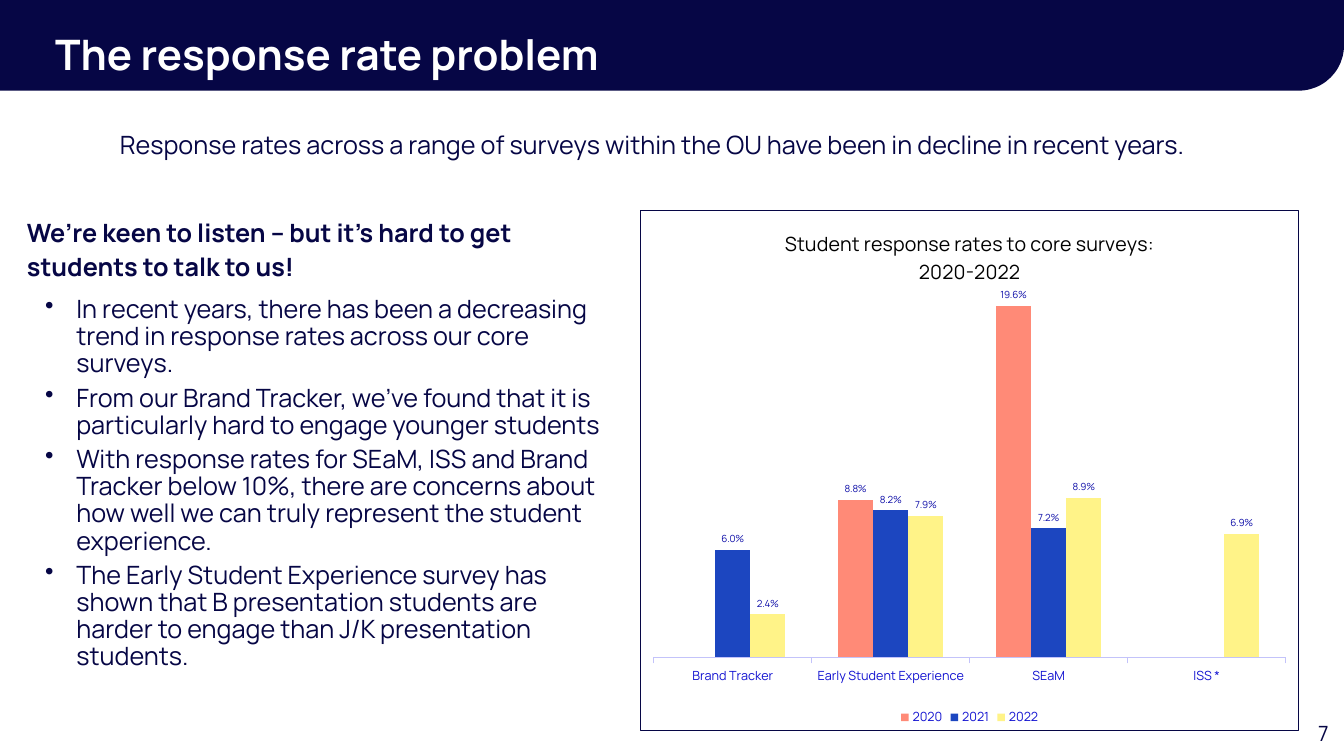
"""Build a slide on falling survey response rates, with bullets and a column chart."""
from dataclasses import dataclass

from lxml import etree
from pptx import Presentation
from pptx.chart.data import CategoryChartData
from pptx.dml.color import RGBColor
from pptx.enum.chart import XL_CHART_TYPE, XL_LABEL_POSITION, XL_LEGEND_POSITION, XL_TICK_MARK
from pptx.enum.shapes import MSO_SHAPE
from pptx.enum.text import PP_ALIGN
from pptx.oxml import parse_xml
from pptx.oxml.ns import nsdecls, qn
from pptx.util import Pt

COLUMNS = XL_CHART_TYPE.COLUMN_CLUSTERED
LABEL_ABOVE = XL_LABEL_POSITION.OUTSIDE_END
LEGEND_BELOW = XL_LEGEND_POSITION.BOTTOM
TICK_OUTSIDE = XL_TICK_MARK.OUTSIDE
TICK_NONE = XL_TICK_MARK.NONE
HEADER_SHAPE = MSO_SHAPE.ROUND_1_RECTANGLE
LEFT, RIGHT = PP_ALIGN.LEFT, PP_ALIGN.RIGHT

TITLE = "The response rate problem"
SUBTITLE = "Response rates across a range of surveys within the OU have been in decline in recent years."
PAGE_NUMBER = "7"
LEAD = "We’re keen to listen – but it’s hard to get students to talk to us!"
BULLETS = [
    "In recent years, there has been a decreasing trend in response rates across our core surveys.",
    "From our Brand Tracker, we’ve found that it is particularly hard to engage younger students",
    "With response rates for SEaM, ISS and Brand Tracker below 10%, there are concerns about "
    "how well we can truly represent the student experience.",
    "The Early Student Experience survey has shown that B presentation students are harder "
    "to engage than J/K presentation students.",
]
CHART_TITLE = ["Student response rates to core surveys:", "2020-2022"]
SURVEYS = ["Brand Tracker", "Early Student Experience", "SEaM", "ISS *"]
RATES = {
    "2020": [None, 0.088, 0.196, None],
    "2021": [0.06, 0.082, 0.072, None],
    "2022": [0.024, 0.079, 0.089, 0.069],
}

WIDTH, HEIGHT = 960, 540
HEADER_BOX = (0, 0, WIDTH, 64.8)
TITLE_BOX = (32.4, 13, 847.4, 38.9)
SUBTITLE_BOX = (78.5, 86.4, 801.4, 38.9)
CONTENT_TOP, CONTENT_HEIGHT = 149.8, 372.2
BODY_BOX = (12.2, CONTENT_TOP, 424.8, CONTENT_HEIGHT)
CHART_BOX = (457.2, CONTENT_TOP, 470.9, CONTENT_HEIGHT)
PAGE_BOX = (906.5, 511.2, 49.7, 25.2)
PLOT_AREA = {"x": 0.02, "y": 0.17, "w": 0.96, "h": 0.69}
BULLET_MARGIN, BULLET_HANG = 35.3, 22.3


@dataclass(frozen=True)
class Theme:
    """Colours and type sizes of the slide."""
    font: str = "Manrope"
    navy: str = "060645"
    white: str = "FFFFFF"
    black: str = "000000"
    axis_text: str = "1212D1"
    axis_line: str = "C3C3FA"
    label_text: str = "0F0FA9"
    series: tuple = ("FF8A77", "1C46C0", "FFF388")
    title: int = 30
    body: int = 18
    page: int = 15
    chart_title: int = 14
    chart: int = 10
    axis: int = 9
    label: int = 7


THEME = Theme()


def points(box):
    return [Pt(value) for value in box]


def style_font(font, size, color, bold=False):
    font.name = THEME.font
    font.size = Pt(size)
    font.bold = bold
    font.color.rgb = RGBColor.from_string(color)


def add_text_frame(slide, box):
    frame = slide.shapes.add_textbox(*points(box)).text_frame
    frame.word_wrap = True
    return frame


def write(paragraph, text, size, color=THEME.navy, bold=False, align=LEFT, spacing=1.1, before=0, after=0):
    paragraph.alignment = align
    paragraph.line_spacing = spacing
    paragraph.space_before = Pt(before)
    paragraph.space_after = Pt(after)
    run = paragraph.add_run()
    run.text = text
    style_font(run.font, size, color, bold)


def add_header(slide):
    header = slide.shapes.add_shape(HEADER_SHAPE, *points(HEADER_BOX))
    header.shadow.inherit = False
    header.adjustments[0] = 0.5
    header.fill.solid()
    header.fill.fore_color.rgb = RGBColor.from_string(THEME.navy)
    header.line.fill.background()
    header._element.spPr.find(qn("a:xfrm")).set("flipV", "1")


def add_body(slide):
    frame = add_text_frame(slide, BODY_BOX)
    write(frame.paragraphs[0], LEAD, THEME.body, bold=True, after=6)
    for text in BULLETS:
        paragraph = frame.add_paragraph()
        properties = paragraph._p.get_or_add_pPr()
        properties.set("marL", str(Pt(BULLET_MARGIN)))
        properties.set("indent", str(-Pt(BULLET_HANG)))
        etree.SubElement(properties, qn("a:buChar"), char="•")
        write(paragraph, text, THEME.body, spacing=0.9, before=5)


def add_border(chart):
    border = parse_xml(
        f'<c:spPr {nsdecls("c", "a")}><a:noFill/><a:ln w="{Pt(0.75)}"><a:solidFill>'
        f'<a:srgbClr val="{THEME.navy}"/></a:solidFill></a:ln></c:spPr>'
    )
    chart._chartSpace.find(qn("c:chart")).addnext(border)


def place_plot(chart):
    plot_area = chart._chartSpace.find(qn("c:chart")).find(qn("c:plotArea"))
    for layout in plot_area.findall(qn("c:layout")):
        plot_area.remove(layout)
    layout = etree.Element(qn("c:layout"))
    manual = etree.SubElement(layout, qn("c:manualLayout"))
    etree.SubElement(manual, qn("c:layoutTarget"), val="inner")
    for side in "xy":
        etree.SubElement(manual, qn(f"c:{side}Mode"), val="edge")
    for key, value in PLOT_AREA.items():
        etree.SubElement(manual, qn(f"c:{key}"), val=str(value))
    plot_area.insert(0, layout)


def add_rate_chart(slide):
    data = CategoryChartData(number_format="0.0%")
    data.categories = SURVEYS
    for year, rates in RATES.items():
        data.add_series(year, rates)
    chart = slide.shapes.add_chart(COLUMNS, *points(CHART_BOX), data).chart
    style_font(chart.font, THEME.chart, THEME.navy)
    add_border(chart)
    place_plot(chart)

    chart.has_title = True
    title_frame = chart.chart_title.text_frame
    for index, line in enumerate(CHART_TITLE):
        paragraph = title_frame.add_paragraph() if index else title_frame.paragraphs[0]
        run = paragraph.add_run()
        run.text = line
        style_font(run.font, THEME.chart_title, THEME.black)
    chart.chart_title.include_in_layout = False

    chart.has_legend = True
    chart.legend.position = LEGEND_BELOW
    chart.legend.include_in_layout = False
    style_font(chart.legend.font, THEME.axis, THEME.axis_text)

    survey_axis = chart.category_axis
    survey_axis.major_tick_mark = TICK_OUTSIDE
    survey_axis.minor_tick_mark = TICK_NONE
    survey_axis.format.line.width = Pt(0.75)
    survey_axis.format.line.color.rgb = RGBColor.from_string(THEME.axis_line)
    style_font(survey_axis.tick_labels.font, THEME.axis, THEME.axis_text)
    rate_axis = chart.value_axis
    rate_axis.minimum_scale, rate_axis.maximum_scale = 0, 0.2
    rate_axis.has_major_gridlines = False
    rate_axis.visible = False

    plot = chart.plots[0]
    plot.gap_width, plot.overlap, plot.vary_by_categories = 150, 0, False
    for series, color in zip(plot.series, THEME.series):
        series.format.fill.solid()
        series.format.fill.fore_color.rgb = RGBColor.from_string(color)
        labels = series.data_labels
        labels.show_value = True
        labels.number_format, labels.number_format_is_linked = "0.0%", False
        labels.position = LABEL_ABOVE
        style_font(labels.font, THEME.label, THEME.label_text)


def main():
    presentation = Presentation()
    presentation.slide_width, presentation.slide_height = Pt(WIDTH), Pt(HEIGHT)
    slide = presentation.slides.add_slide(presentation.slide_layouts[6])
    page = add_text_frame(slide, PAGE_BOX)
    write(page.paragraphs[0], PAGE_NUMBER, THEME.page, align=RIGHT, spacing=1.0)
    add_header(slide)
    subtitle = add_text_frame(slide, SUBTITLE_BOX)
    write(subtitle.paragraphs[0], SUBTITLE, THEME.body, after=6)
    title = add_text_frame(slide, TITLE_BOX)
    write(title.paragraphs[0], TITLE, THEME.title, THEME.white, bold=True)
    add_rate_chart(slide)
    add_body(slide)
    presentation.save("out.pptx")


if __name__ == "__main__":
    main()
